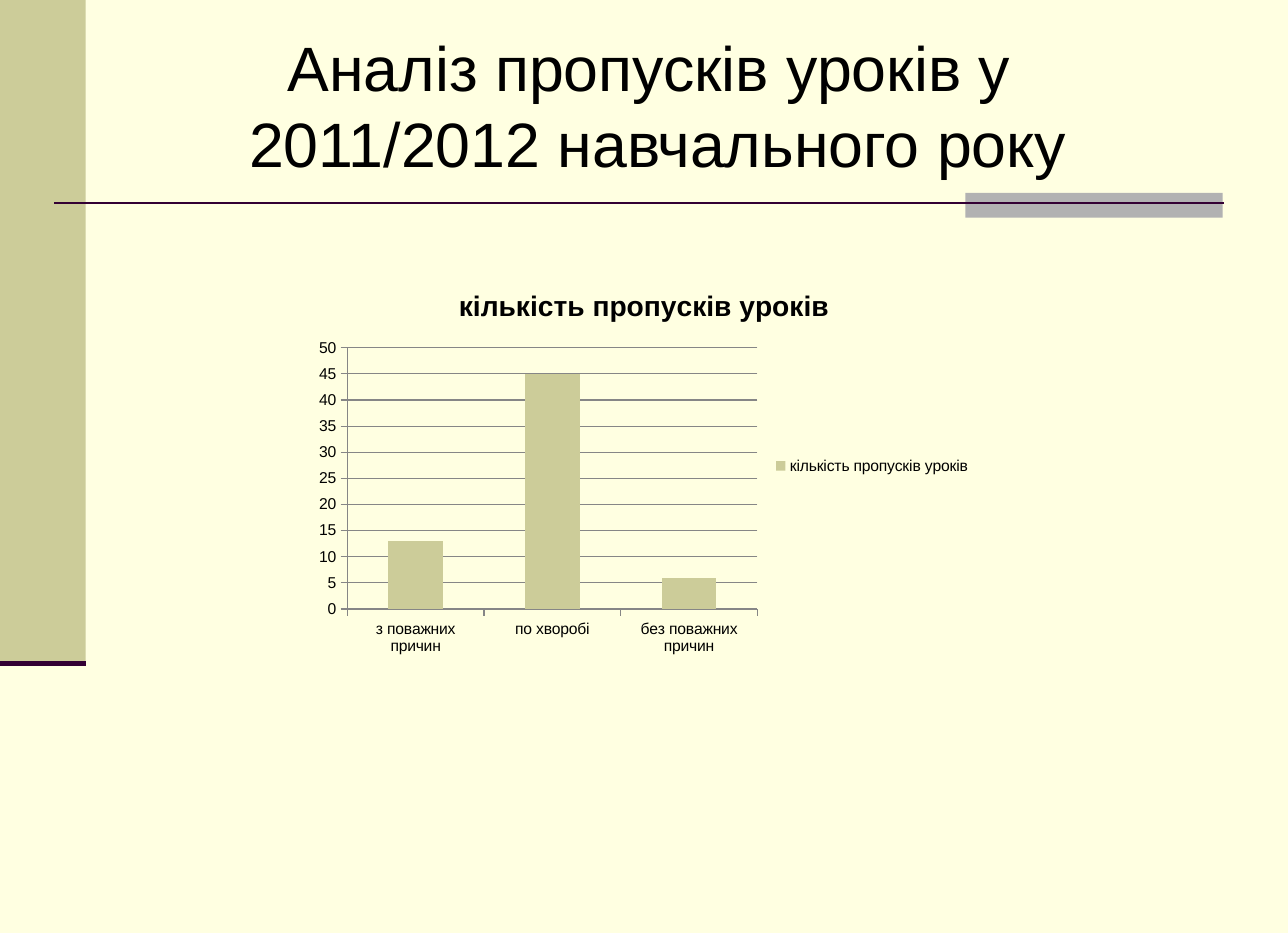
from lxml import etree
from pptx import Presentation
from pptx.chart.data import CategoryChartData
from pptx.dml.color import RGBColor
from pptx.enum.chart import XL_CHART_TYPE as ChartType
from pptx.enum.chart import XL_LEGEND_POSITION as LegendPos
from pptx.enum.chart import XL_TICK_MARK as TickMark
from pptx.enum.shapes import MSO_CONNECTOR as Connector
from pptx.enum.shapes import MSO_SHAPE as Shape
from pptx.enum.text import MSO_ANCHOR as Anchor
from pptx.enum.text import PP_ALIGN as Align
from pptx.oxml.ns import qn
from pptx.util import Inches, Pt

WIDTH, HEIGHT = 11.42, 8.27
FONT = "Arial"
CREAM = RGBColor(0xFF, 0xFF, 0xE1)
KHAKI = RGBColor(0xCC, 0xCC, 0x99)
SILVER = RGBColor(0xB2, 0xB2, 0xB2)
GRAY = RGBColor(0x86, 0x86, 0x86)
PLUM = RGBColor(0x33, 0x00, 0x33)
BLACK = RGBColor(0, 0, 0)

BAND_WIDTH, BAND_HEIGHT = 0.76, 5.88
RULE_Y = 1.8
SERIES_NAME = "кількість пропусків уроків"
ABSENCES = {"з поважних причин": 13, "по хворобі": 45, "без поважних причин": 6}


def box(*lengths):
    return [Inches(n) for n in lengths]


def set_font(font, size, bold=False, color=BLACK):
    font.name, font.size, font.bold = FONT, Pt(size), bold
    font.color.rgb = color


def add_block(slide, place, color):
    sp = slide.shapes.add_shape(Shape.RECTANGLE, *box(*place))
    sp.shadow.inherit = False
    sp.fill.solid()
    sp.fill.fore_color.rgb = color
    sp.line.fill.background()


def add_rule(slide, x1, x2, y, weight):
    """Draw a horizontal plum line."""
    line = slide.shapes.add_connector(Connector.STRAIGHT, *box(x1, y, x2, y))
    line.line.color.rgb = PLUM
    line.line.width = Pt(weight)
    etree.SubElement(line._element.spPr, qn("a:effectLst"))


def add_text(slide, place, lines, size, align=Align.CENTER, anchor=Anchor.MIDDLE):
    tf = slide.shapes.add_textbox(*box(*place)).text_frame
    tf.word_wrap = True
    tf.vertical_anchor = anchor
    for i, line in enumerate(lines):
        p = tf.add_paragraph() if i else tf.paragraphs[0]
        p.alignment = align
        r = p.add_run()
        r.text = line
        set_font(r.font, size)


def style_axis(axis):
    axis.major_tick_mark = TickMark.OUTSIDE
    axis.minor_tick_mark = TickMark.NONE
    axis.format.line.color.rgb = GRAY
    set_font(axis.tick_labels.font, 10)


def add_absence_chart(slide, place):
    data = CategoryChartData()
    data.categories = list(ABSENCES)
    data.add_series(SERIES_NAME, list(ABSENCES.values()))
    chart = slide.shapes.add_chart(ChartType.COLUMN_CLUSTERED, *box(*place), data).chart
    set_font(chart.font, 10)

    chart.has_title = True
    r = chart.chart_title.text_frame.paragraphs[0].add_run()
    r.text = SERIES_NAME
    set_font(r.font, 18, bold=True)

    chart.has_legend = True
    chart.legend.position = LegendPos.RIGHT
    chart.legend.include_in_layout = False
    set_font(chart.legend.font, 10)

    style_axis(chart.category_axis)
    values = chart.value_axis
    style_axis(values)
    values.minimum_scale, values.maximum_scale, values.major_unit = 0, 50, 5
    values.has_major_gridlines = True
    values.major_gridlines.format.line.color.rgb = GRAY

    plot = chart.plots[0]
    plot.gap_width = 150
    plot.vary_by_categories = False
    fill = plot.series[0].format.fill
    fill.solid()
    fill.fore_color.rgb = KHAKI


def main():
    prs = Presentation()
    prs.slide_width, prs.slide_height = box(WIDTH, HEIGHT)
    slide = prs.slides.add_slide(prs.slide_layouts[6])
    slide.background.fill.solid()
    slide.background.fill.fore_color.rgb = CREAM

    add_block(slide, (0, 0, BAND_WIDTH, BAND_HEIGHT), KHAKI)
    add_block(slide, (8.56, 1.71, 2.28, 0.22), SILVER)
    add_rule(slide, 0.48, 10.85, RULE_Y, 1.5)
    add_rule(slide, 0, BAND_WIDTH, BAND_HEIGHT, 3.5)
    add_text(slide, (0.67, 0.2, 10.32, 1.45),
             ["Аналіз пропусків уроків у ", "2011/2012 навчального року"], size=40)
    add_absence_chart(slide, (2.71, 2.38, 6, 3.5))
    prs.save("out.pptx")


if __name__ == "__main__":
    main()
